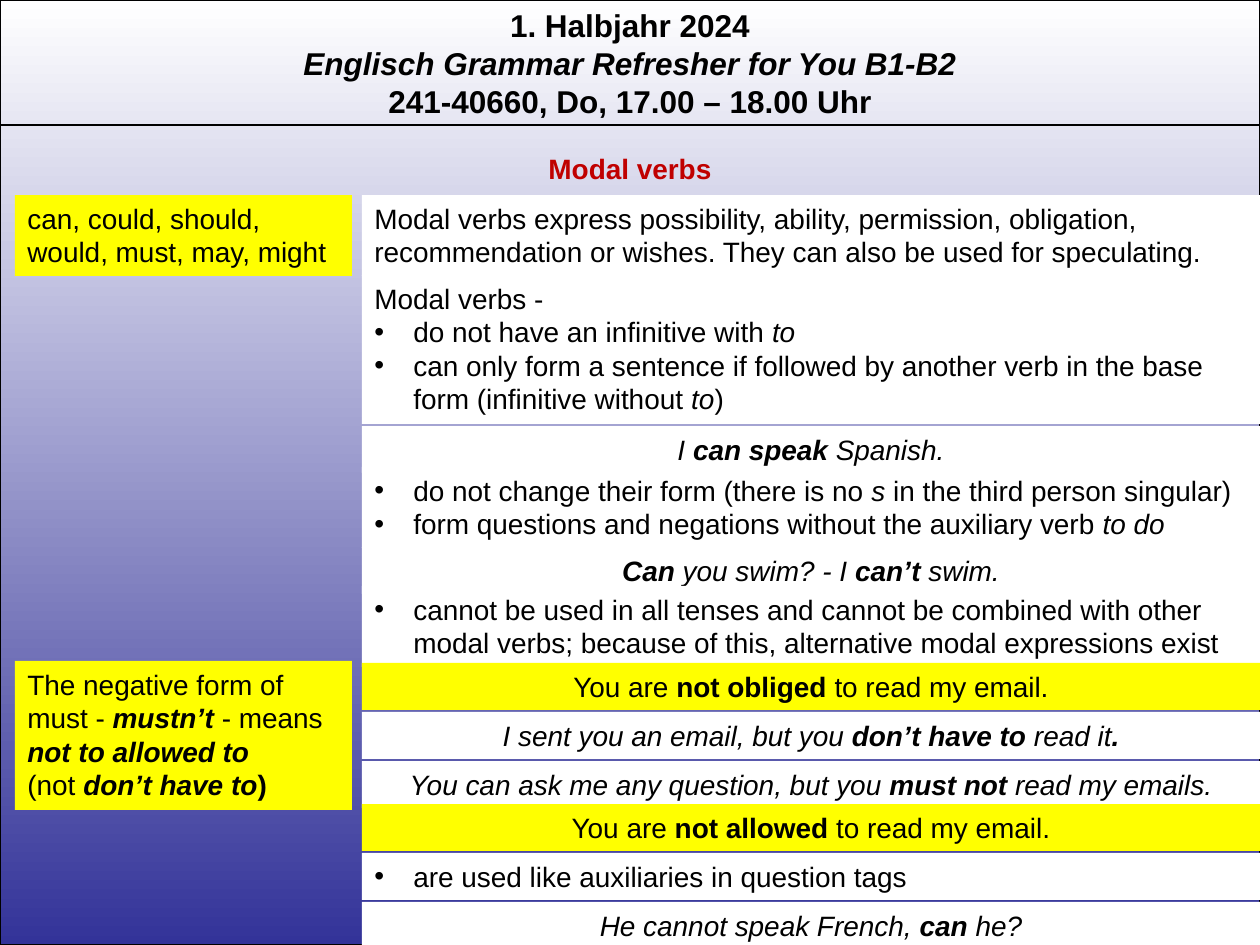
from dataclasses import dataclass

from lxml.etree import SubElement
from pptx import Presentation
from pptx.dml.color import RGBColor
from pptx.enum.shapes import MSO_CONNECTOR, MSO_SHAPE
from pptx.enum.text import MSO_AUTO_SIZE, PP_ALIGN
from pptx.oxml.ns import qn
from pptx.util import Emu, Pt


@dataclass(frozen=True)
class Theme:
    """Colours, type and spacing of the slide."""
    ink: RGBColor = RGBColor(0, 0, 0)
    white: RGBColor = RGBColor(255, 255, 255)
    deep: RGBColor = RGBColor(0x33, 0x33, 0x99)
    mark: RGBColor = RGBColor(255, 255, 0)
    red: RGBColor = RGBColor(0xC0, 0, 0)
    face: str = "Arial"
    head: int = 18
    body: int = 16
    rule: float = 0.75
    indent: int = 39
    pad: int = 13
    line: int = 34


THEME = Theme()
WIDE, HIGH = 1260, 945
CENTER, LEFT = PP_ALIGN.CENTER, PP_ALIGN.LEFT

LEFT_CARDS = [
    (0, 2, THEME.mark, LEFT, ["can, could, should, would, must, may, might"]),
    (466, 4, THEME.mark, LEFT, [
        "The negative form of must - *_mustn’t_* - means *_not to allowed to_*",
        "(not *_don’t have to_)*"]),
]
RIGHT_CARDS = [
    (0, 2, THEME.white, LEFT, [
        "Modal verbs express possibility, ability, permission, obligation, "
        "recommendation or wishes. They can also be used for speculating."]),
    (80, 4, THEME.white, LEFT, [
        "Modal verbs -",
        "• do not have an infinitive with _to_",
        "• can only form a sentence if followed by another verb in the base "
        "form (infinitive without _to_)"]),
    (272, 2, THEME.white, LEFT, [
        "• do not change their form (there is no _s_ in the third person singular)",
        "• form questions and negations without the auxiliary verb _to do_"]),
    (231, 1, THEME.white, CENTER, ["_I *can speak *Spanish._"]),
    (352, 1, THEME.white, CENTER, ["_*Can *you swim? - I *can’t* swim._"]),
    (391, 2, THEME.white, LEFT, [
        "• cannot be used in all tenses and cannot be combined with other "
        "modal verbs; because of this, alternative modal expressions exist"]),
    (517, 1, THEME.white, CENTER, ["_I sent you an email, but you *don’t have to *read it*.*_"]),
    (566, 1, THEME.white, CENTER, [
        "_You can ask me any question, but you *must not *read my emails._"]),
    (468, 1, THEME.mark, CENTER, ["You are *not obliged *to read my email."]),
    (609, 1, THEME.mark, CENTER, ["You are *not allowed *to read my email."]),
    (658, 1, THEME.white, LEFT, ["• are used like auxiliaries in question tags"]),
    (707, 1, THEME.white, CENTER, ["_He cannot speak French,* can *he?_"]),
]


def px(num):
    """Turn whole px into EMU."""
    return Emu(round(num * 914400 / 126))


def bullet(para):
    """Give a paragraph a hanging bullet."""
    props = para._p.get_or_add_pPr()
    props.set("marL", str(px(THEME.indent)))
    props.set("indent", str(-px(THEME.indent)))
    SubElement(props, qn("a:buFont"), typeface=THEME.face)
    SubElement(props, qn("a:buChar"), char="•")


def write(para, text):
    """Add runs, where * switches bold and _ switches italic."""
    slant = False
    for i, chunk in enumerate(text.split("*")):
        for j, part in enumerate(chunk.split("_")):
            slant ^= j > 0
            if part:
                run = para.add_run()
                run.text = part
                if i % 2:
                    run.font.bold = True
                if slant:
                    run.font.italic = True


def panel(slide, box, lines, align=LEFT, fill=None, size=THEME.body, color=THEME.ink, bold=False):
    """Place a text box with one paragraph per line."""
    shape = slide.shapes.add_textbox(*map(px, box))
    if fill is not None:
        shape.fill.solid()
        shape.fill.fore_color.rgb = fill
    frame = shape.text_frame
    frame.word_wrap = True
    frame.auto_size = MSO_AUTO_SIZE.SHAPE_TO_FIT_TEXT
    for i, text in enumerate(lines):
        para = frame.add_paragraph() if i else frame.paragraphs[0]
        para.alignment = align
        if text.startswith("• "):
            bullet(para)
        font = para.font
        font.name, font.size, font.bold = THEME.face, Pt(size), bold
        font.color.rgb = color
        write(para, text.removeprefix("• "))


def backdrop(slide, box):
    """Fill the box with the outlined vertical gradient."""
    shape = slide.shapes.add_shape(MSO_SHAPE.RECTANGLE, *map(px, box))
    shape.shadow.inherit = False
    shape.fill.gradient()
    shape.fill.gradient_angle = 270
    for stop, color, spot in zip(shape.fill.gradient_stops, (THEME.white, THEME.deep), (0, 1)):
        stop.color.rgb, stop.position = color, spot
    shape.line.color.rgb = THEME.ink
    shape.line.width = Pt(THEME.rule)


def header(slide, box):
    """Place the course lines and the rule below them."""
    x, y, w, h = box
    panel(slide, box, [
        "1. Halbjahr 2024",
        "_Englisch Grammar Refresher for You B1-B2_",
        "241-40660, Do, 17.00 – 18.00 Uhr"], CENTER, size=THEME.head, bold=True)
    rule = slide.shapes.add_connector(
        MSO_CONNECTOR.STRAIGHT, *map(px, (x, y + h - 2, x + w, y + h - 2)))
    rule.line.color.rgb = THEME.ink
    rule.line.width = Pt(THEME.rule)
    SubElement(rule._element.spPr, qn("a:effectLst"))


def column(slide, box, cards):
    """Place cards at their offsets, each as high as its line count asks."""
    x, y, w = box
    for top, count, fill, align, lines in cards:
        high = THEME.pad + THEME.line * count
        panel(slide, (x, y + top, w, high), lines, align, fill)


def main():
    """Build and save the slide."""
    deck = Presentation()
    deck.slide_width, deck.slide_height = px(WIDE), px(HIGH)
    slide = deck.slides.add_slide(deck.slide_layouts[6])
    backdrop(slide, (0, 0, WIDE, HIGH))
    header(slide, (0, 0, WIDE, 127))
    panel(slide, (0, 145, WIDE, 47), ["Modal verbs"], CENTER, color=THEME.red, bold=True)
    column(slide, (15, 195, 337), LEFT_CARDS)
    column(slide, (362, 195, 898), RIGHT_CARDS)
    deck.save("out.pptx")


if __name__ == "__main__":
    main()
